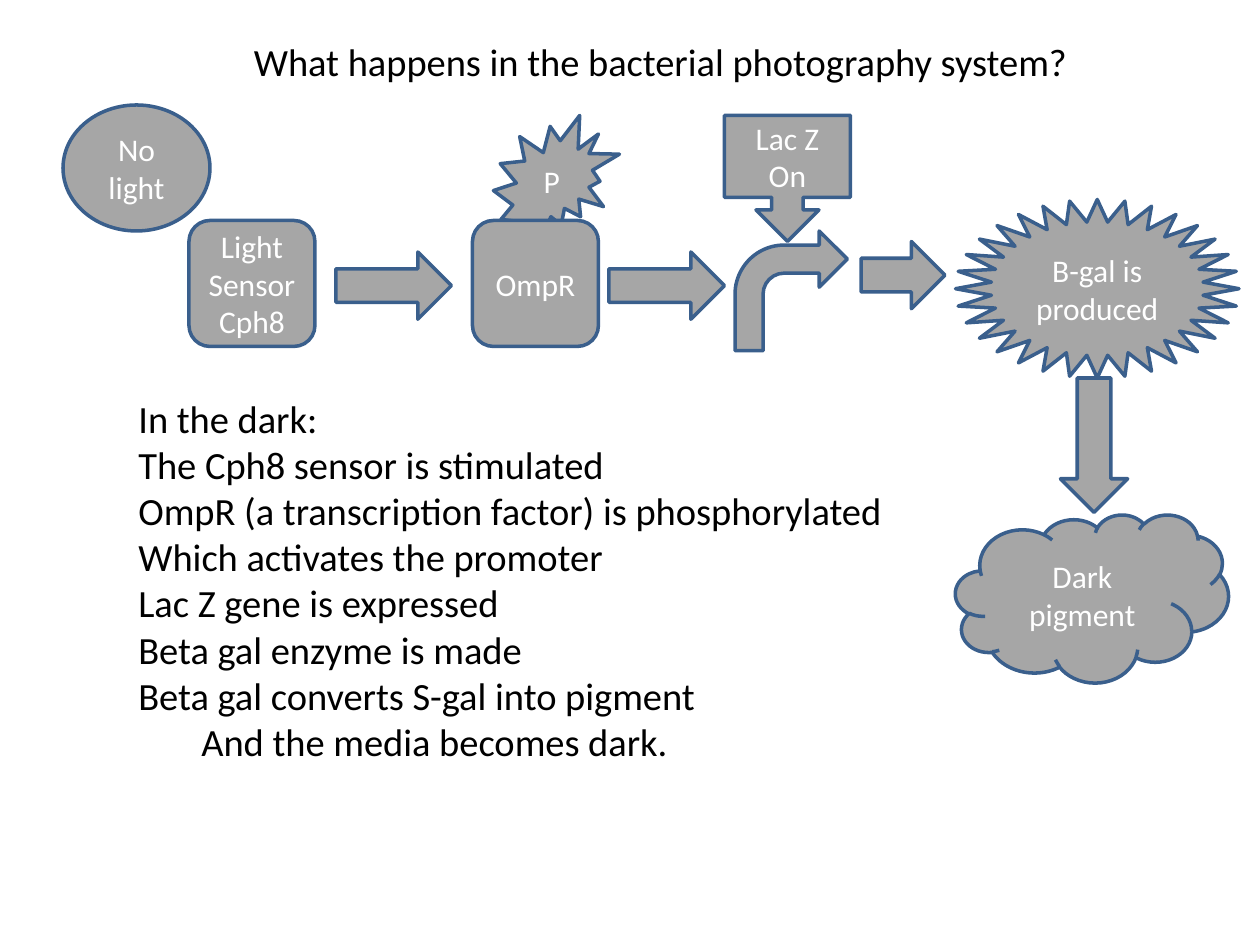
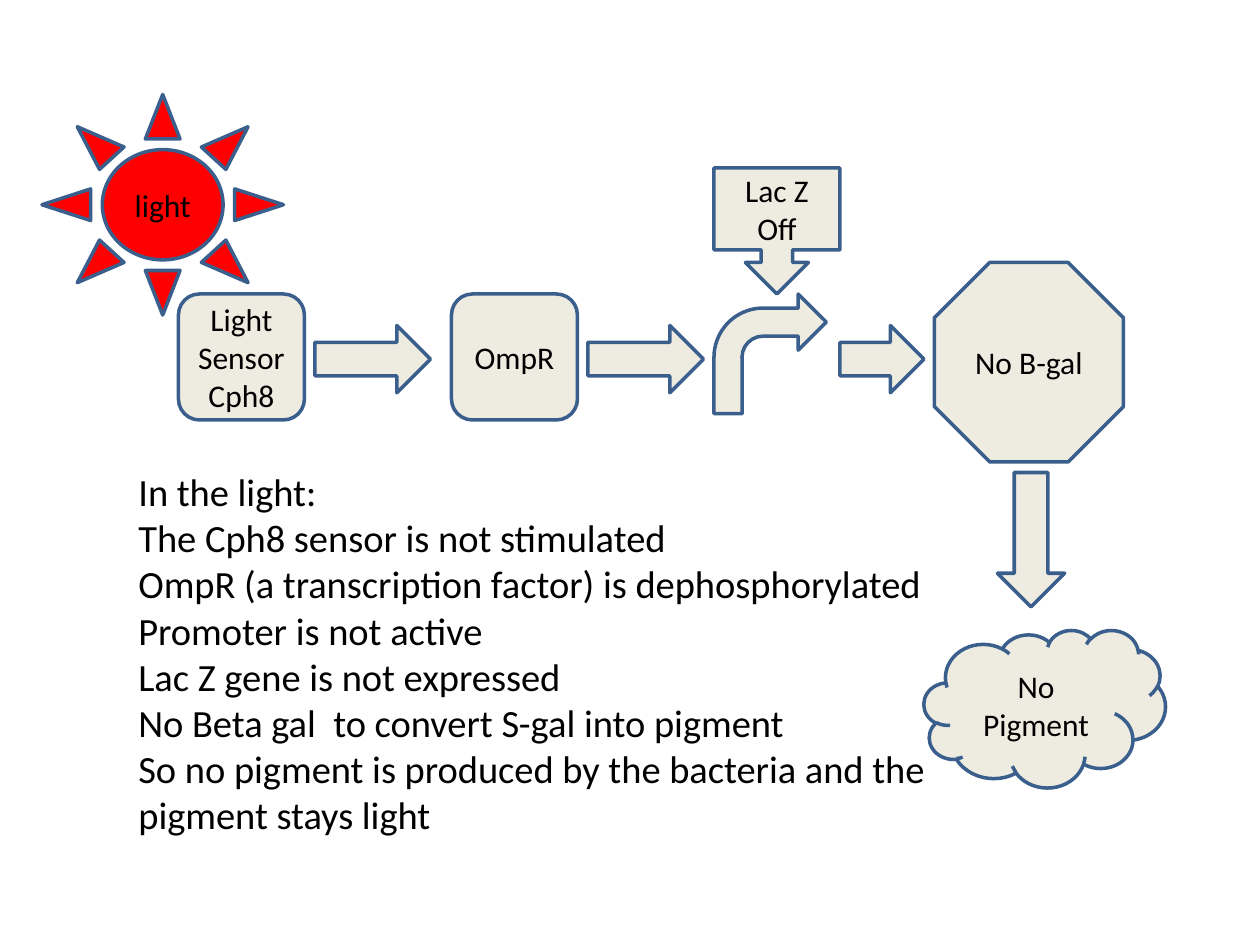
from dataclasses import dataclass

from pptx import Presentation
from pptx import util as u
from pptx.dml.color import RGBColor
from pptx.enum import shapes, text

SLIDE_WIDTH, SLIDE_HEIGHT = u.Inches(10), u.Inches(7.5)
COLUMNS, ROWS = 120, 90
FONT = "Calibri"
OUTLINE, BLACK, WHITE = "3A5F8C", "000000", "FFFFFF"
GRAY, CREAM, RED = "A6A6A6", "EEECE1", "FF0000"
LABEL_SIZE, BODY_SIZE = 18, 22
KIND = shapes.MSO_SHAPE


@dataclass(frozen=True)
class Box:
    column: float
    row: float
    columns: float
    rows: float

    def place(self) -> tuple[int, int, int, int]:
        cell_width, cell_height = SLIDE_WIDTH / COLUMNS, SLIDE_HEIGHT / ROWS
        return (round(self.column * cell_width), round(self.row * cell_height),
                round(self.columns * cell_width), round(self.rows * cell_height))


@dataclass(frozen=True)
class Figure:
    kind: KIND
    box: Box
    label: str = ""
    fill: str = ""


@dataclass(frozen=True)
class TextBlock:
    box: Box
    words: str


@dataclass(frozen=True)
class Pathway:
    fill: str
    label_color: str
    figures: list[Figure]
    blocks: list[TextBlock]


def color(value: str) -> RGBColor:
    return RGBColor.from_string(value)


def format_text(text_frame, size: int, font_color: str, alignment: text.PP_ALIGN) -> None:
    for paragraph in text_frame.paragraphs:
        paragraph.alignment = alignment
        for run in paragraph.runs:
            run.font.name = FONT
            run.font.size = u.Pt(size)
            run.font.color.rgb = color(font_color)


def draw_figure(slide, figure: Figure, fill: str, label_color: str) -> None:
    shape = slide.shapes.add_shape(figure.kind, *figure.box.place())
    shape.shadow.inherit = False
    shape.fill.solid()
    shape.fill.fore_color.rgb = color(figure.fill or fill)
    shape.line.color.rgb = color(OUTLINE)
    shape.line.width = u.Pt(2)
    if figure.label:
        shape.text_frame.text = figure.label
        shape.text_frame.vertical_anchor = text.MSO_ANCHOR.MIDDLE
        format_text(shape.text_frame, LABEL_SIZE, label_color, text.PP_ALIGN.CENTER)


def draw_text(slide, block: TextBlock) -> None:
    text_frame = slide.shapes.add_textbox(*block.box.place()).text_frame
    text_frame.word_wrap = True
    text_frame.auto_size = text.MSO_AUTO_SIZE.SHAPE_TO_FIT_TEXT
    text_frame.text = block.words
    format_text(text_frame, BODY_SIZE, BLACK, text.PP_ALIGN.LEFT)


def draw_pathway(presentation, pathway: Pathway) -> None:
    slide = presentation.slides.add_slide(presentation.slide_layouts[6])
    for figure in pathway.figures:
        draw_figure(slide, figure, pathway.fill, pathway.label_color)
    for block in pathway.blocks:
        draw_text(slide, block)


def protein(column: float, row: float, label: str) -> Figure:
    return Figure(KIND.ROUNDED_RECTANGLE, Box(column, row, 12, 12), label)


def sensor(column: float, row: float) -> Figure:
    return protein(column, row, "Light Sensor\nCph8")


def step(column: float, row: float, columns: float = 11) -> Figure:
    return Figure(KIND.RIGHT_ARROW, Box(column, row, columns, 6.4))


def result_arrow(column: float, row: float) -> Figure:
    return Figure(KIND.DOWN_ARROW, Box(column, row, 6.4, 12.8))


def promoter(column: float, row: float) -> Figure:
    return Figure(KIND.BENT_ARROW, Box(column, row, 10.7, 11.4))


def gene(column: float, row: float, label: str) -> Figure:
    return Figure(KIND.DOWN_ARROW_CALLOUT, Box(column, row, 12, 12), label)


DARK = Pathway(
    GRAY, WHITE,
    [
        Figure(KIND.EXPLOSION2, Box(47, 11, 12, 12), "P"),
        protein(45, 21, "OmpR"),
        sensor(18, 21),
        step(32, 24),
        step(58, 24),
        promoter(70, 22),
        step(82, 23, 8),
        gene(69, 11, "Lac Z On"),
        Figure(KIND.OVAL, Box(6, 10, 14, 12), "No light"),
        result_arrow(101, 36),
        Figure(KIND.STAR_32_POINT, Box(91, 19, 27, 17), "B-gal is produced"),
        Figure(KIND.CLOUD, Box(91, 49, 26, 16), "Dark pigment"),
    ],
    [
        TextBlock(Box(12, 37, 78.5, 45.6), """In the dark:
The Cph8 sensor is stimulated
OmpR (a transcription factor) is phosphorylated
Which activates the promoter
Lac Z gene is expressed
Beta gal enzyme is made
Beta gal converts S-gal into pigment
\tAnd the media becomes dark."""),
        TextBlock(Box(23, 3, 84, 5.6), "What happens in the bacterial photography system?"),
    ],
)

LIGHT = Pathway(
    CREAM, BLACK,
    [
        sensor(17, 28),
        protein(43, 28, "OmpR"),
        promoter(68, 28),
        Figure(KIND.OCTAGON, Box(89, 25, 18, 19), "No B-gal"),
        step(30, 31),
        step(56, 31),
        step(80, 31, 8),
        Figure(KIND.SUN, Box(4, 9, 23, 21), "light", RED),
        gene(68, 16, "Lac Z Off"),
        result_arrow(95, 45),
        Figure(KIND.CLOUD, Box(88, 60, 23, 15), "No Pigment"),
    ],
    [
        TextBlock(Box(12, 44, 79, 36.7), """In the light:
The Cph8 sensor is not stimulated
OmpR (a transcription factor) is dephosphorylated
Promoter is not active
Lac Z gene is not expressed
No Beta gal  to convert S-gal into pigment
So no pigment is produced by the bacteria and the \tpigment stays light"""),
    ],
)


def main() -> None:
    presentation = Presentation()
    presentation.slide_width, presentation.slide_height = SLIDE_WIDTH, SLIDE_HEIGHT
    for pathway in (DARK, LIGHT):
        draw_pathway(presentation, pathway)
    presentation.save("out.pptx")


if __name__ == "__main__":
    main()
